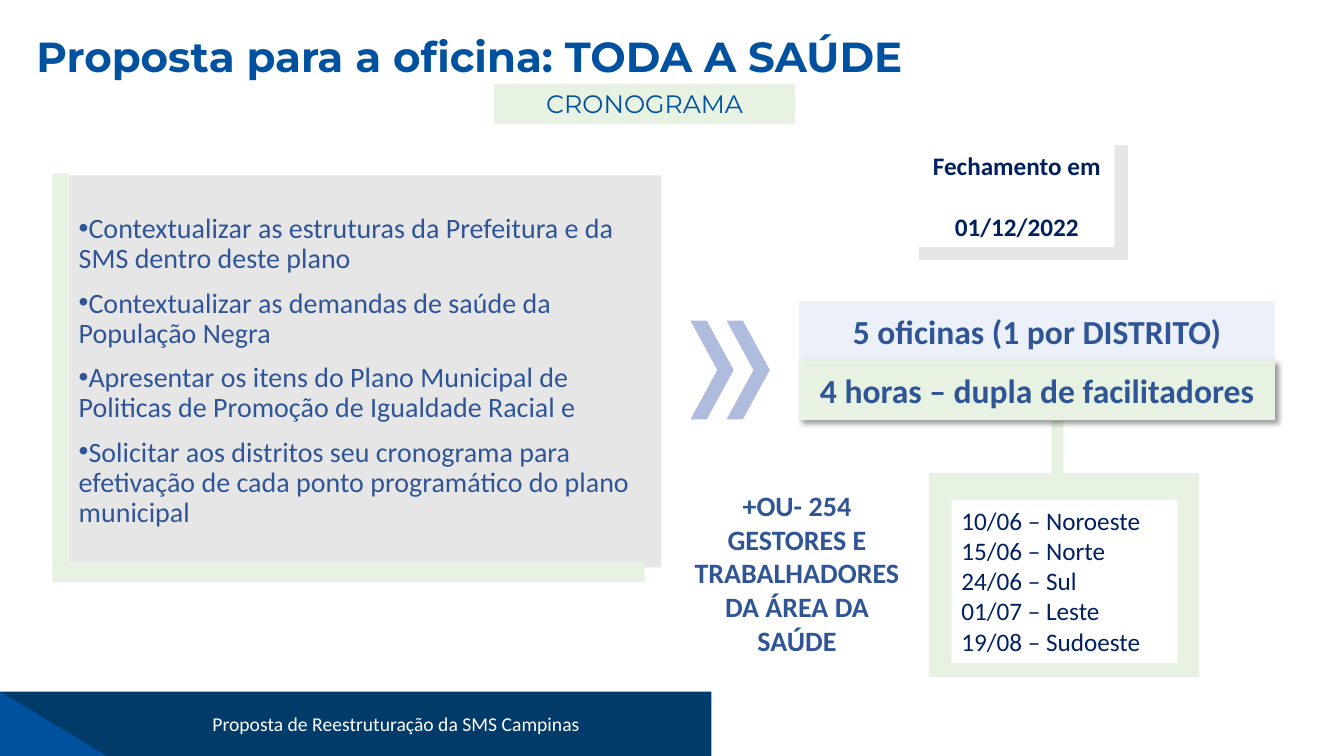
from lxml.etree import SubElement
from pptx import Presentation
from pptx.dml.color import RGBColor
from pptx.enum.shapes import MSO_SHAPE
from pptx.enum.text import MSO_ANCHOR, MSO_AUTO_SIZE, PP_ALIGN
from pptx.oxml.ns import qn
from pptx.util import Cm, Pt

BLUE, NAVY, DARK_BLUE, TEXT_BLUE = "00519F", "003B69", "002060", "2F5597"
GREEN, GRAY, WHITE, PALE_BLUE, LILAC = "E7F2E2", "E6E6E6", "FFFFFF", "EBF0F9", "B0BCDE"

TOPICS = [
    "Contextualizar as estruturas da Prefeitura e da SMS dentro deste plano",
    "Contextualizar as demandas de saúde da População Negra",
    "Apresentar os itens do Plano Municipal de Politicas de Promoção de Igualdade Racial e",
    "Solicitar aos distritos seu cronograma para efetivação de cada ponto programático do plano municipal",
]
DATES = ["10/06 – Noroeste", "15/06 – Norte", "24/06 – Sul", "01/07 – Leste", "19/08 – Sudoeste"]
AUDIENCE = ["+OU- 254", "GESTORES E TRABALHADORES", "DA ÁREA DA SAÚDE"]


def color(hex_code):
    return RGBColor.from_string(hex_code)


def move(shape, left, top, width, height):
    shape.left, shape.top = Cm(left), Cm(top)
    shape.width, shape.height = Cm(width), Cm(height)


def block(slide, left, top, width, height, fill, kind=MSO_SHAPE.RECTANGLE, edge=False):
    shape = slide.shapes.add_shape(kind, Cm(left), Cm(top), Cm(width), Cm(height))
    shape.shadow.inherit = False
    shape.fill.solid()
    shape.fill.fore_color.rgb = color(fill)
    if edge:
        shape.line.color.rgb = color(fill)
        shape.line.width = Pt(1)
    else:
        shape.line.fill.background()
    return shape


def write(shape, lines, size, hex_code, font="Calibri", bold=False,
          align=PP_ALIGN.CENTER, anchor=MSO_ANCHOR.TOP, gap=0, bullet=None):
    """Fill the shape with one paragraph per line, with gap points between them."""
    frame = shape.text_frame
    frame.word_wrap = True
    frame.auto_size = MSO_AUTO_SIZE.NONE
    frame.vertical_anchor = anchor
    for index, line in enumerate(lines):
        paragraph = frame.paragraphs[0] if index == 0 else frame.add_paragraph()
        paragraph.text = line
        paragraph.alignment = align
        paragraph.space_before = Pt(gap if index else 0)
        if bullet:
            paragraph.line_spacing = 0.9
            properties = paragraph._p.get_or_add_pPr()
            properties.set("marL", "0")
            properties.set("indent", "0")
            SubElement(properties, qn("a:buChar")).set("char", bullet)
        paragraph.font.name = font
        paragraph.font.size = Pt(size)
        paragraph.font.bold = bold
        paragraph.font.color.rgb = color(hex_code)


def cast_shadow(shape):
    effects = shape._element.spPr.find(qn("a:effectLst"))
    outer = SubElement(effects, qn("a:outerShdw"), blurRad=str(Pt(4)), dist=str(Pt(3)),
                       dir="2700000", algn="tl", rotWithShape="0")
    black = SubElement(outer, qn("a:srgbClr"), val="000000")
    SubElement(black, qn("a:alpha"), val="40000")


def add_footer(slide, left, top, width, height):
    block(slide, left, top, width, height, NAVY)
    block(slide, left, top, 2.69, height, BLUE, MSO_SHAPE.RIGHT_TRIANGLE)
    caption = slide.shapes.add_textbox(Cm(left + 2.2), Cm(top), Cm(width - 2.36), Cm(height))
    write(caption, ["Proposta de Reestruturação da SMS Campinas"], 14, WHITE,
          anchor=MSO_ANCHOR.MIDDLE)


def add_heading(slide, left, top, width, height):
    title = slide.shapes.title
    move(title, left, top, width, height)
    write(title, ["Proposta para a oficina: TODA A SAÚDE"], 30, BLUE, "Montserrat", True,
          PP_ALIGN.LEFT)
    schedule = block(slide, left + 11.79, top + 1.47, 7.59, 1.02, GREEN)
    write(schedule, ["CRONOGRAMA"], 18, BLUE, "Montserrat")


def add_topics(slide, left, top, width, height):
    panel_width, panel_height = width - 0.41, height - 0.43
    topics = slide.placeholders[1]
    move(topics, left + 0.41, top + 0.05, panel_width, panel_height)
    topics.fill.solid()
    topics.fill.fore_color.rgb = color(GRAY)
    write(topics, TOPICS, 20, TEXT_BLUE, align=PP_ALIGN.LEFT, anchor=MSO_ANCHOR.MIDDLE,
          gap=10, bullet="•")
    block(slide, left, top, 0.43, panel_height, GREEN)
    block(slide, left, top + height - 0.51, panel_width, 0.51, GREEN)


def add_chevrons(slide, left, top, width, height):
    step = 0.91
    for index in range(2):
        chevron = block(slide, left + index * step, top, width - step, height, LILAC,
                        MSO_SHAPE.CHEVRON)
        chevron.adjustments[0] = 0.623


def add_deadline(slide, left, top, width, height):
    block(slide, left, top, width, height, GRAY, edge=True)
    deadline = block(slide, left - 0.03, top, width - 0.28, height - 0.3, WHITE)
    write(deadline, ["Fechamento em", "01/12/2022"], 18, DARK_BLUE, bold=True, gap=22)


def add_workshops(slide, left, top, width, height):
    row_height = height / 2
    workshops = block(slide, left, top, width, row_height, PALE_BLUE)
    duration = block(slide, left, top + row_height, width, row_height, GREEN)
    cast_shadow(duration)
    for row, line in ((workshops, "5 oficinas (1 por DISTRITO)"),
                      (duration, "4 horas – dupla de facilitadores")):
        write(row, [line], 24, TEXT_BLUE, bold=True, anchor=MSO_ANCHOR.MIDDLE)


def add_dates(slide, left, top, width, height):
    """Draw the framed dates and the stem that rises from the frame."""
    block(slide, left + 3.08, top - 2.4, 0.3, 3.94, GREEN)
    block(slide, left, top, width, height, GREEN, edge=True)
    dates = block(slide, left + 0.56, top + 0.66, width - 1.09, height - 1, WHITE)
    write(dates, DATES, 18, DARK_BLUE, align=PP_ALIGN.LEFT)


def add_audience(slide, left, top, width, height):
    audience = slide.shapes.add_textbox(Cm(left), Cm(top), Cm(width), Cm(height))
    write(audience, AUDIENCE, 20, TEXT_BLUE, bold=True)


def main():
    deck = Presentation()
    deck.slide_width, deck.slide_height = Cm(33.87), Cm(19.05)
    slide = deck.slides.add_slide(deck.slide_layouts[1])
    add_footer(slide, 0, 17.43, 17.93, 1.62)
    add_heading(slide, 0.66, 0.64, 32.56, 1.55)
    add_topics(slide, 1.32, 4.37, 15.34, 10.31)
    add_chevrons(slide, 17.4, 8.08, 2, 2.49)
    add_deadline(slide, 23.19, 3.66, 5.21, 2.87)
    add_dates(slide, 23.42, 11.94, 6.78, 5.11)
    add_workshops(slide, 20.14, 7.59, 11.99, 3)
    add_audience(slide, 17.2, 12.19, 5.77, 4.52)
    deck.save("out.pptx")


if __name__ == "__main__":
    main()
